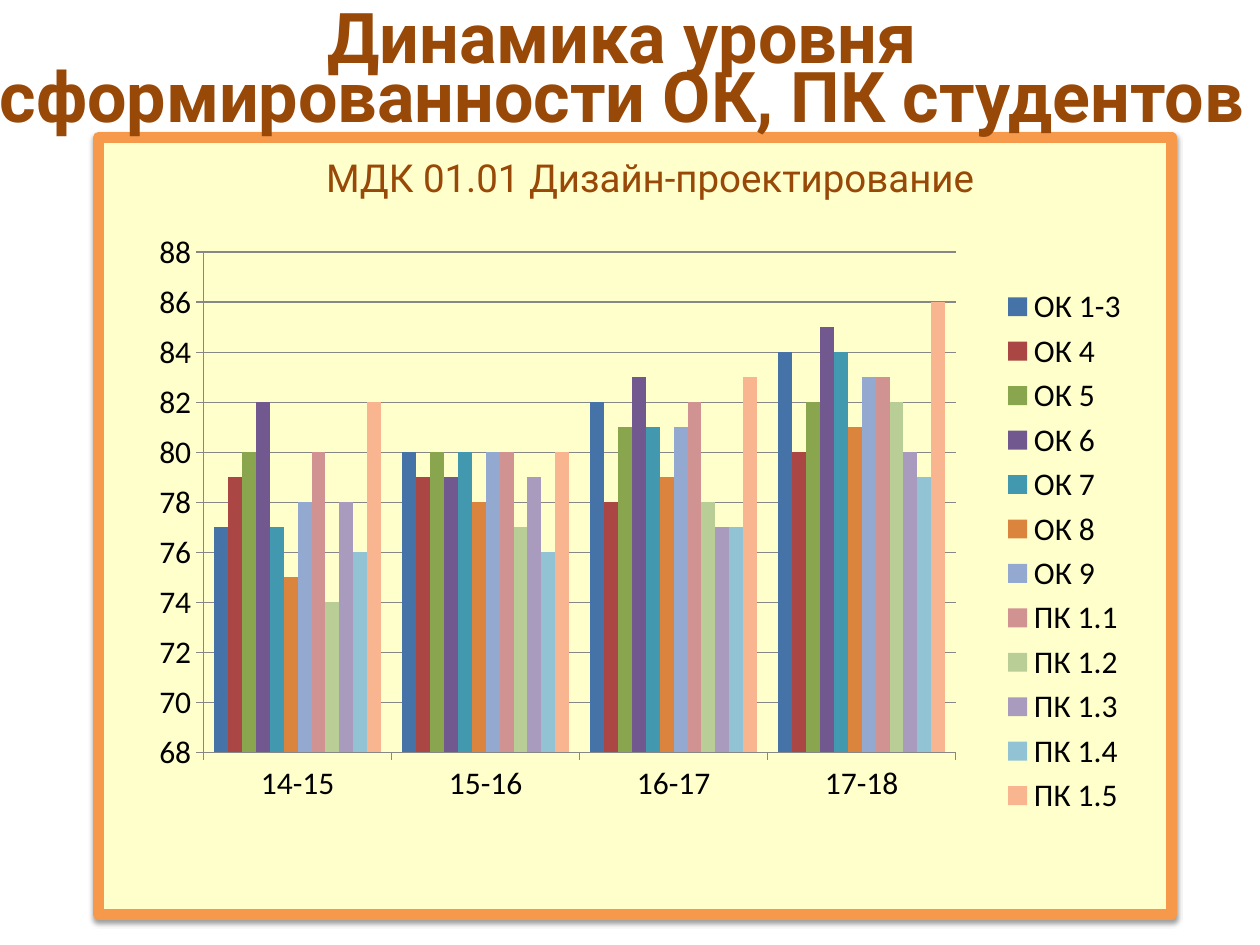
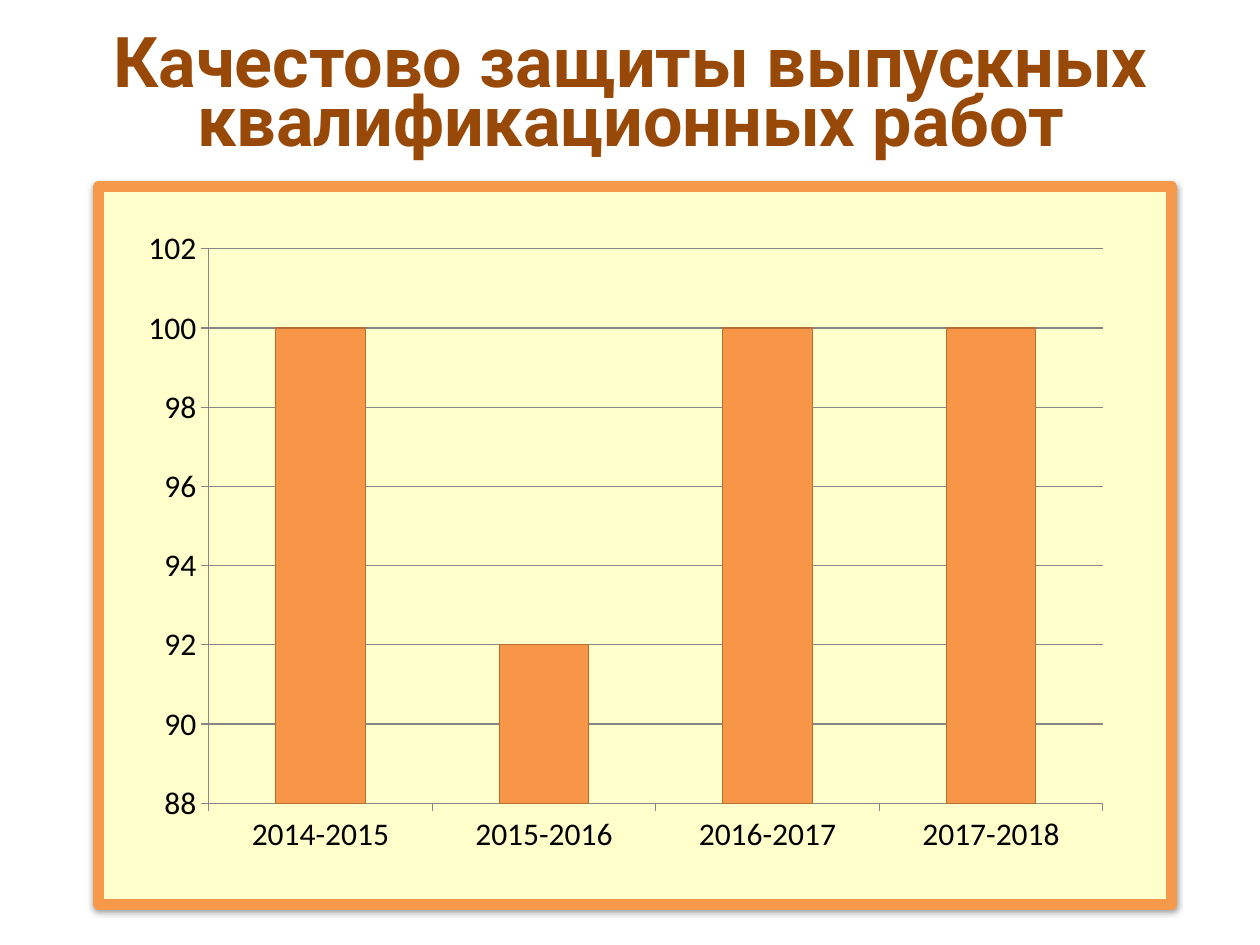
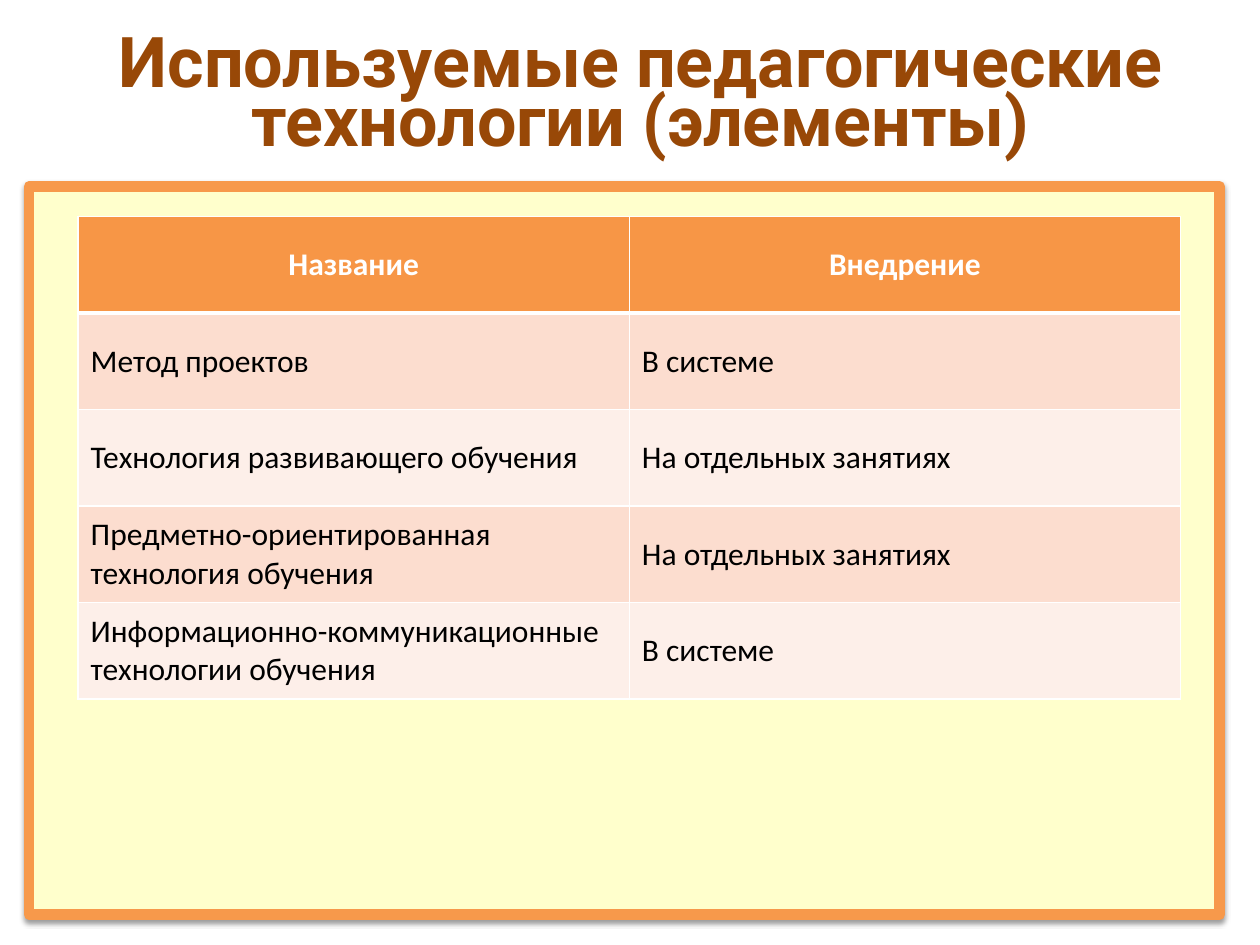
"""Builds three slides on student competences, thesis defence and teaching technologies."""
import pptx
import pptx.chart.data
import pptx.dml.color
import pptx.enum.chart
import pptx.enum.shapes
import pptx.enum.text
import pptx.oxml
import pptx.oxml.ns
import pptx.util

THEME = {
    "frame": "FFFFCC", "border": "F7994B", "title": "984807", "accent": "F79646",
    "edge": "B66D31", "axis": "878787", "ink": "000000", "light": "FFFFFF",
    "bands": ("FCDDCF", "FDEFE9"),
    "series": ("4573A7", "AA4643", "89A54E", "71588F", "4198AF", "DB843D",
               "93A9CF", "D19392", "B9CD96", "A99BBD", "91C3D5", "F9B590"),
    "heading": "Roboto", "body": "Calibri",
    "title_pt": 40, "subtitle_pt": 22, "body_pt": 18,
}

SKILLS = {
    "title": ("Динамика уровня ", "сформированности ОК, ПК студентов "),
    "title_box": (-3.1, 1.07, 106.3, 14),
    "frame": (7.8, 14.53, 85.2, 82.27),
    "subtitle": "МДК 01.01 Дизайн-проектирование",
    "subtitle_box": (21.1, 15.6, 59.4, 6.27),
    "chart": {
        "box": (10.9, 21.87, 79.7, 72.93),
        "scale": (68, 88, 2),
        "plot": {"x": 0.066, "y": 0.066, "w": 0.749, "h": 0.726},
        "cats": ("14-15", "15-16", "16-17", "17-18"),
        "series": (
            ("ОК 1-3", (77, 80, 82, 84)),
            ("ОК 4", (79, 79, 78, 80)),
            ("ОК 5", (80, 80, 81, 82)),
            ("ОК 6", (82, 79, 83, 85)),
            ("ОК 7", (77, 80, 81, 84)),
            ("ОК 8", (75, 78, 79, 81)),
            ("ОК 9", (78, 80, 81, 83)),
            ("ПК 1.1", (80, 80, 82, 83)),
            ("ПК 1.2", (74, 77, 78, 82)),
            ("ПК 1.3", (78, 79, 77, 80)),
            ("ПК 1.4", (76, 76, 77, 79)),
            ("ПК 1.5", (82, 80, 83, 86)),
        ),
    },
}

DEFENCE = {
    "title": ("Качестово защиты выпускных квалификационных работ",),
    "title_box": (-3.1, 3.6, 106.3, 14),
    "frame": (7.8, 19.73, 85.2, 76),
    "chart": {
        "box": (10.2, 22.93, 78.9, 68.8),
        "scale": (88, 102, 2),
        "cats": ("2014-2015", "2015-2016", "2016-2017", "2017-2018"),
        "series": (("Series 1", (100, 92, 100, 100)),),
    },
}

TECHNOLOGIES = {
    "title": ("Используемые педагогические технологии (элементы)",),
    "title_box": (-2.3, 3.6, 106.3, 14),
    "frame": (2.3, 19.73, 94.5, 77.07),
    "table_box": (6.2, 22.93, 87.5, 51.07),
    "rows": (
        ("Название", "Внедрение"),
        ("Метод проектов", "В системе"),
        ("Технология развивающего обучения", "На отдельных занятиях"),
        ("Предметно-ориентированная технология обучения", "На отдельных занятиях"),
        ("Информационно-коммуникационные технологии обучения", "В системе"),
    ),
}

WIDTH, HEIGHT = pptx.util.Inches(10), pptx.util.Inches(7.5)


def place(box):
    """Turns percentages of the slide into lengths."""
    return [int(side * share / 100) for side, share in zip((WIDTH, HEIGHT) * 2, box)]


def rgb(name):
    return pptx.dml.color.RGBColor.from_string(THEME.get(name, name))


def paint(fill, color):
    fill.solid()
    fill.fore_color.rgb = rgb(color)


def style(font, color, **values):
    for key, value in values.items():
        setattr(font, key, value)
    font.color.rgb = rgb(color)


def xml(tag, inner="", **attrs):
    """Makes one DrawingML or chart element."""
    prefix = tag.split(":")[0]
    listed = "".join(f' {key}="{value}"' for key, value in attrs.items())
    spaces = pptx.oxml.ns.nsdecls(*dict.fromkeys((prefix, "a")))
    return pptx.oxml.parse_xml(f"<{tag} {spaces}{listed}>{inner}</{tag}>")


def solid(color, inner=""):
    return f'<a:solidFill><a:srgbClr val="{THEME[color]}">{inner}</a:srgbClr></a:solidFill>'


def add_frame(slide, box):
    sp = slide.shapes.add_shape(pptx.enum.shapes.MSO_SHAPE.RECTANGLE, *place(box))
    paint(sp.fill, "frame")
    paint(sp.line.fill, "border")
    sp.line.width = pptx.util.Pt(6)
    shadow = ('<a:outerShdw blurRad="39370" dist="20320" dir="5400000" rotWithShape="0">'
              '<a:srgbClr val="000000"><a:alpha val="38000"/></a:srgbClr></a:outerShdw>')
    sp.element.spPr.append(xml("a:effectLst", shadow))


def add_text(slide, box, lines, size, bold=False):
    tf = slide.shapes.add_textbox(*place(box)).text_frame
    tf.word_wrap = True
    for i, line in enumerate(lines):
        p = tf.paragraphs[0] if i == 0 else tf.add_paragraph()
        r = p.add_run()
        r.text = line
        style(r.font, "title", name=THEME["heading"], size=pptx.util.Pt(size), bold=bold)
    return tf


def add_title(slide, box, lines):
    tf = add_text(slide, box, lines, THEME["title_pt"], True)
    for p in tf.paragraphs:
        p.alignment = pptx.enum.text.PP_ALIGN.CENTER
        p.line_spacing = 0.7
        p.runs[0].font._element.insert(0, xml("a:ln", solid("light"), w=18415))


def add_subtitle(slide, box, line):
    p = add_text(slide, box, [line], THEME["subtitle_pt"]).paragraphs[0]
    p._p.get_or_add_pPr().set("indent", str(pptx.util.Inches(0.38)))


def add_chart(slide, spec_data):
    data = pptx.chart.data.CategoryChartData()
    data.categories = spec_data["cats"]
    for name, values in spec_data["series"]:
        data.add_series(name, values)
    kind = pptx.enum.chart.XL_CHART_TYPE.COLUMN_CLUSTERED
    chart = slide.shapes.add_chart(kind, *place(spec_data["box"]), data).chart
    chart.has_title = False
    style(chart.font, "ink", name=THEME["body"], size=pptx.util.Pt(THEME["body_pt"]))
    plot = chart.plots[0]
    plot.gap_width, plot.overlap, plot.vary_by_categories = 150, 0, False
    axis = chart.value_axis
    axis.minimum_scale, axis.maximum_scale, axis.major_unit = spec_data["scale"]
    axis.has_major_gridlines = True
    for part in (axis, chart.category_axis, axis.major_gridlines):
        paint(part.format.line.fill, "axis")
        part.format.line.width = pptx.util.Pt(0.75)
    chart.has_legend = len(plot.series) > 1
    if chart.has_legend:
        chart.legend.position = pptx.enum.chart.XL_LEGEND_POSITION.RIGHT
        chart.legend.include_in_layout = False
        for series, color in zip(plot.series, THEME["series"]):
            paint(series.format.fill, color)
    else:
        fmt = plot.series[0].format
        paint(fmt.fill, "accent")
        paint(fmt.line.fill, "edge")
        fmt.line.width = pptx.util.Pt(0.75)
    if "plot" in spec_data:
        set_plot_layout(chart, spec_data["plot"])


def set_plot_layout(chart, shares):
    area = chart._chartSpace.chart.plotArea
    for old in area.findall(pptx.oxml.ns.qn("c:layout")):
        area.remove(old)
    values = {"layoutTarget": "inner", "xMode": "edge", "yMode": "edge", **shares}
    inner = "".join(f'<c:{key} val="{value}"/>' for key, value in values.items())
    area.insert(0, xml("c:layout", f"<c:manualLayout>{inner}</c:manualLayout>"))


def add_table(slide, box, rows):
    table = slide.shapes.add_table(len(rows), len(rows[0]), *place(box)).table
    for i, row in enumerate(rows):
        for j, text in enumerate(row):
            cell = table.cell(i, j)
            cell.text = text
            cell.vertical_anchor = pptx.enum.text.MSO_ANCHOR.MIDDLE
            widths = {"L": 1, "R": 1, "T": 3 if i == 1 else 1, "B": 3 if i == 0 else 1}
            for side, width in widths.items():
                line = xml(f"a:ln{side}", solid("light"), w=pptx.util.Pt(width))
                cell._tc.get_or_add_tcPr().append(line)
            paint(cell.fill, THEME["bands"][(i - 1) % 2] if i else "accent")
            p = cell.text_frame.paragraphs[0]
            if i == 0:
                p.alignment = pptx.enum.text.PP_ALIGN.CENTER
            style(p.runs[0].font, "ink" if i else "light", name=THEME["body"],
                  size=pptx.util.Pt(THEME["body_pt"]), bold=i == 0)


def main():
    prs = pptx.Presentation()
    prs.slide_width, prs.slide_height = WIDTH, HEIGHT
    for page in (SKILLS, DEFENCE, TECHNOLOGIES):
        slide = prs.slides.add_slide(prs.slide_layouts[6])
        add_frame(slide, page["frame"])
        add_title(slide, page["title_box"], page["title"])
        if "subtitle" in page:
            add_subtitle(slide, page["subtitle_box"], page["subtitle"])
        if "chart" in page:
            add_chart(slide, page["chart"])
        if "rows" in page:
            add_table(slide, page["table_box"], page["rows"])
    prs.save("out.pptx")


if __name__ == "__main__":
    main()
